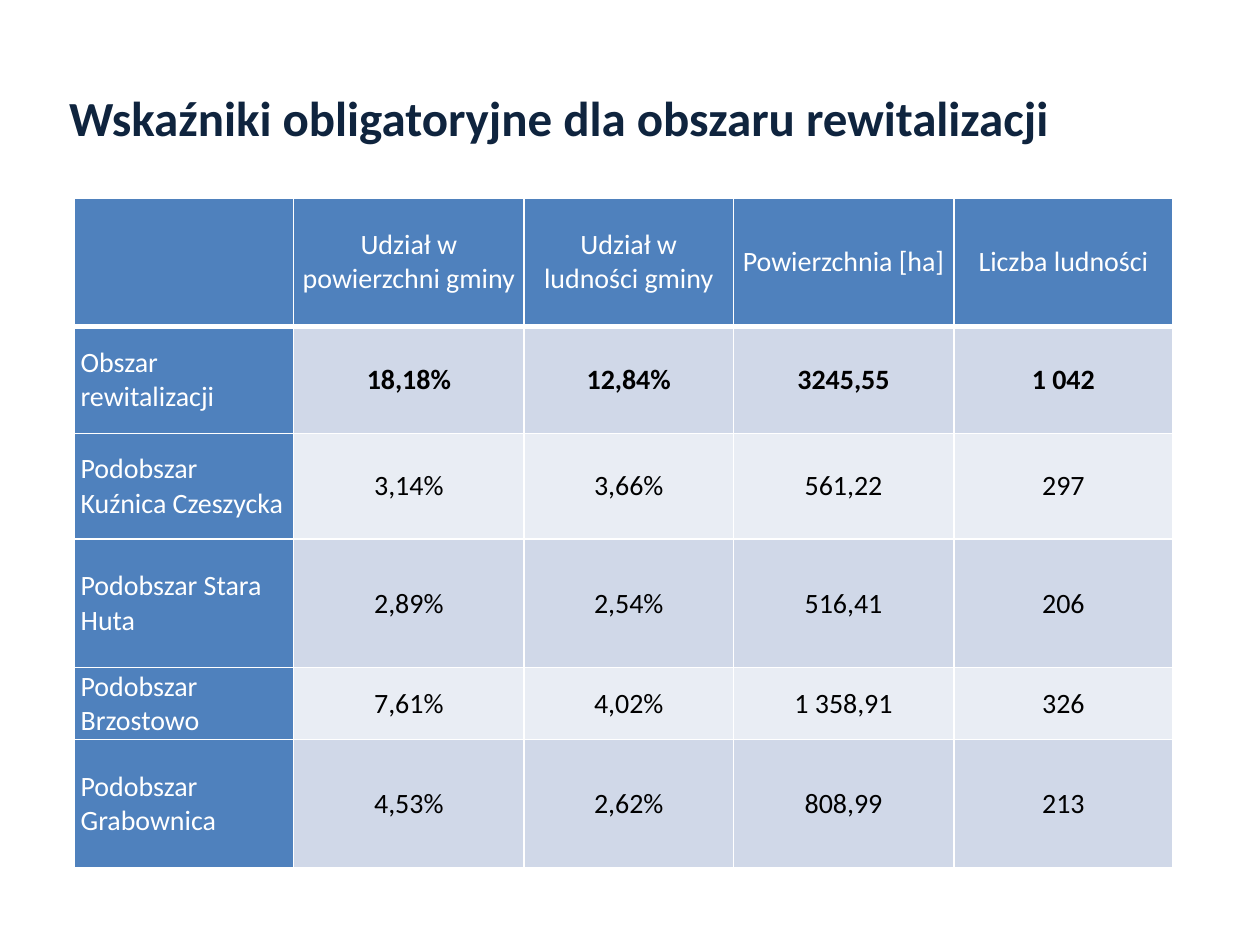
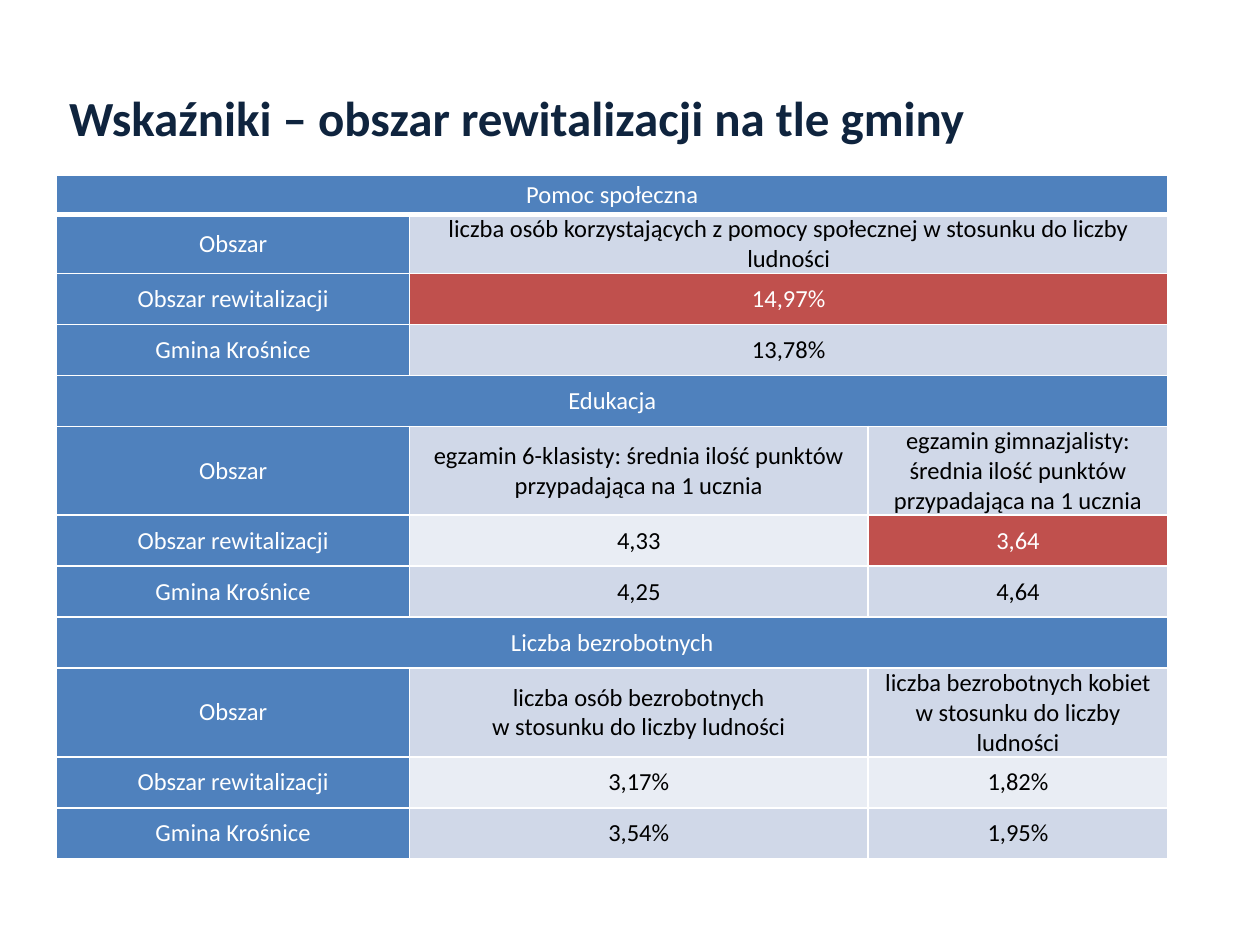
from pptx import Presentation
from pptx.dml.color import RGBColor
from pptx.enum.text import MSO_ANCHOR, PP_ALIGN
from pptx.oxml import parse_xml
from pptx.oxml.ns import nsdecls
from pptx.util import Inches, Pt

HUES = {
    "navy": "0F243E", "blue": "4F81BD", "red": "C0504D", "band": "D0D8E8",
    "pale": "E9EDF4", "white": "FFFFFF", "black": "000000",
}
FONT = "Calibri"
COLS, ROWS = 100, 75

SHARES = [
    ["", "Udział w powierzchni gminy", "Udział w ludności gminy",
     "Powierzchnia [ha]", "Liczba ludności"],
    ["Obszar rewitalizacji", "18,18%", "12,84%", "3245,55", "1 042"],
    ["Podobszar Kuźnica Czeszycka", "3,14%", "3,66%", "561,22", "297"],
    ["Podobszar Stara Huta", "2,89%", "2,54%", "516,41", "206"],
    ["Podobszar Brzostowo", "7,61%", "4,02%", "1 358,91", "326"],
    ["Podobszar Grabownica", "4,53%", "2,62%", "808,99", "213"],
]
AREA, ZONE, TOWN = "Obszar", "Obszar rewitalizacji", "Gmina Krośnice"
RATIO = "w stosunku do liczby ludności"
POINTS = "średnia ilość punktów przypadająca na 1 ucznia"
TOPICS = [
    ["Pomoc społeczna"],
    [AREA, f"liczba osób korzystających z pomocy społecznej {RATIO}"],
    [ZONE, "14,97%"],
    [TOWN, "13,78%"],
    ["Edukacja"],
    [AREA, f"egzamin 6-klasisty: {POINTS}", f"egzamin gimnazjalisty: {POINTS}"],
    [ZONE, "4,33", "3,64"],
    [TOWN, "4,25", "4,64"],
    ["Liczba bezrobotnych"],
    [AREA, f"liczba osób bezrobotnych\n{RATIO}",
     f"liczba bezrobotnych kobiet\n{RATIO}"],
    [ZONE, "3,17%", "1,82%"],
    [TOWN, "3,54%", "1,95%"],
]


def write(frame, text, size=16, hue="black", bold=False, align=PP_ALIGN.CENTER):
    """Fill a text frame, one paragraph for each line."""
    frame.word_wrap = True
    for index, line in enumerate(text.split("\n")):
        para = frame.add_paragraph() if index else frame.paragraphs[0]
        para.alignment = align
        font = para.font
        font.name, font.size, font.bold = FONT, Pt(size), bold
        font.color.rgb = RGBColor.from_string(HUES[hue])
        if line:
            para.add_run().text = line


class Deck:
    """Hold the style, the grid and the current slide."""

    def __init__(self):
        """Start a deck with ten by seven and a half inch slides."""
        self.show = Presentation()
        self.show.slide_width, self.show.slide_height = Inches(10), Inches(7.5)
        self.slide = None

    def across(self, count):
        """Turn grid columns into a length."""
        return int(self.show.slide_width * count / COLS)

    def down(self, count):
        """Turn grid rows into a length."""
        return int(self.show.slide_height * count / ROWS)

    def page(self, title):
        """Add a blank slide with the shared title."""
        self.slide = self.show.slides.add_slide(self.show.slide_layouts[6])
        box = self.slide.shapes.add_textbox(
            self.across(4.5), self.down(3), self.across(90), self.down(12.5))
        box.text_frame.vertical_anchor = MSO_ANCHOR.MIDDLE
        write(box.text_frame, title, size=28, hue="navy", bold=True,
              align=PP_ALIGN.LEFT)

    def edge(self, cell, row):
        """Draw white cell borders, thick below the top row."""
        props = cell._tc.get_or_add_tcPr()
        thick = {"B": row == 0, "T": row == 1}
        for side in "LRTB":
            width = Pt(3 if thick.get(side) else 1)
            props.append(parse_xml(
                f'<a:ln{side} {nsdecls("a")} w="{width}"><a:solidFill>'
                f'<a:srgbClr val="{HUES["white"]}"/></a:solidFill></a:ln{side}>'))

    def paint(self, cell, row, hue):
        """Give a cell its borders, fill, margins and anchor."""
        self.edge(cell, row)
        cell.fill.solid()
        cell.fill.fore_color.rgb = RGBColor.from_string(HUES[hue])
        cell.margin_left = cell.margin_right = Inches(0.05)
        cell.margin_top = cell.margin_bottom = 0
        cell.vertical_anchor = MSO_ANCHOR.MIDDLE

    def table(self, data, left, top, wides, highs, size=16,
              side=PP_ALIGN.CENTER, strong=None, alerts=()):
        """Add a banded table; the last text of a short row spans the rest."""
        grid = self.slide.shapes.add_table(
            len(highs), len(wides), self.across(left), self.down(top),
            self.across(sum(wides)), self.down(sum(highs))).table
        grid.first_row = grid.horz_banding = False
        for col, wide in zip(grid.columns, wides):
            col.width = self.across(wide)
        for line, high in zip(grid.rows, highs):
            line.height = self.down(high)
        last = len(wides) - 1
        for row, texts in enumerate(data):
            end = len(texts) - 1
            for col in range(last + 1):
                spot = min(col, end)
                head = row == 0 or spot == 0
                alert = (row, spot) in alerts
                band = "band" if row % 2 else "pale"
                hue = "blue" if head else "red" if alert else band
                cell = grid.cell(row, col)
                self.paint(cell, row, hue)
                if col <= end:
                    write(cell.text_frame, texts[col], size=size,
                          hue="white" if head or alert else "black",
                          bold=row == strong and not head,
                          align=side if col == 0 else PP_ALIGN.CENTER)
            if end < last:
                grid.cell(row, end).merge(grid.cell(row, last))


def main():
    """Build both slides and save the deck."""
    deck = Deck()
    deck.page("Wskaźniki obligatoryjne dla obszaru rewitalizacji")
    deck.table(SHARES, 5.9, 15.7, [17.4, 18.3, 16.6, 17.5, 17.4],
               [10.2, 8.5, 8.4, 10.2, 5.7, 10.2],
               side=PP_ALIGN.LEFT, strong=1)
    deck.page("Wskaźniki – obszar rewitalizacji na tle gminy")
    deck.table(TOPICS, 4.5, 13.9, [28, 36.4, 23.8],
               [3.1, 4.7, 4.05, 4.05] + [4.05, 7.05, 4.05, 4.05] * 2,
               size=14, alerts={(2, 1), (6, 2)})
    deck.show.save("out.pptx")


if __name__ == "__main__":
    main()
